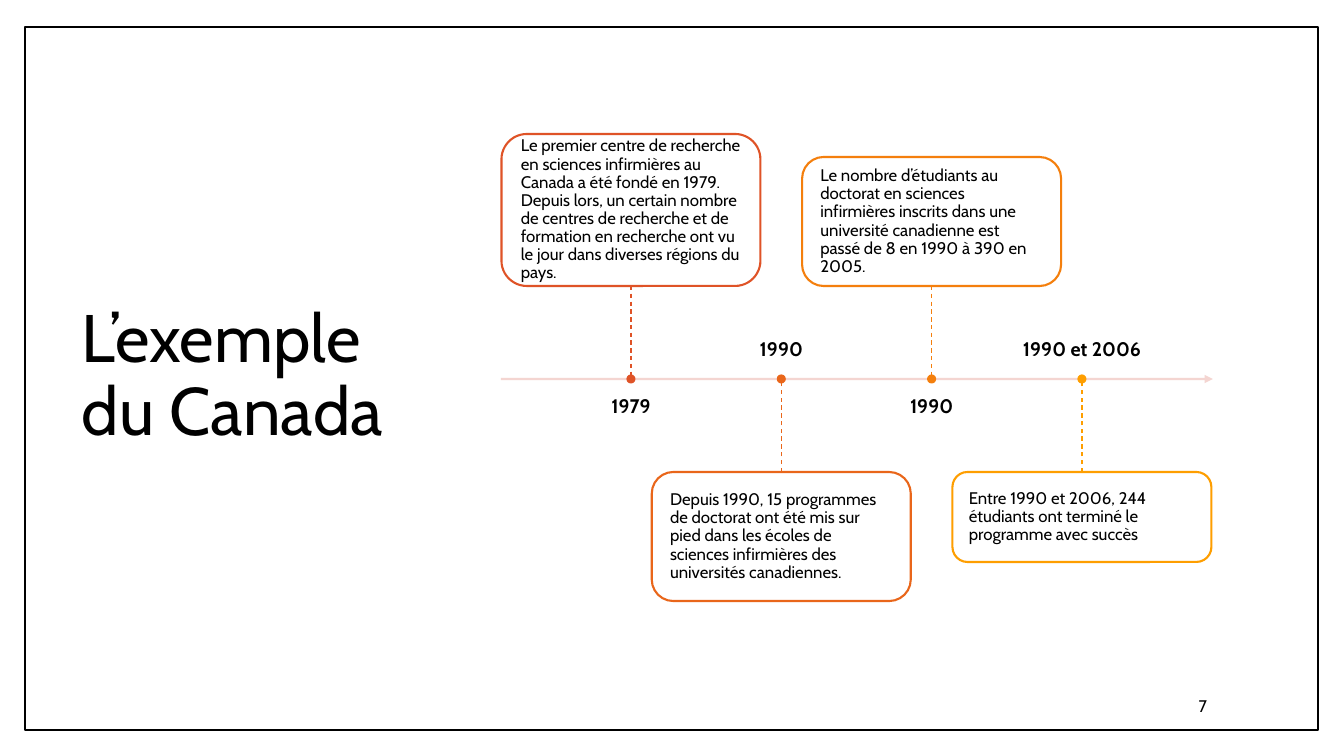
from lxml import etree
from pptx import Presentation
from pptx.dml.color import RGBColor
from pptx.enum.dml import MSO_LINE
from pptx.enum.shapes import MSO_CONNECTOR, MSO_SHAPE
from pptx.enum.text import MSO_ANCHOR, PP_ALIGN
from pptx.oxml.ns import qn
from pptx.util import Pt

DASH = MSO_LINE.DASH
STRAIGHT = MSO_CONNECTOR.STRAIGHT
RECT, ROUNDED, OVAL = MSO_SHAPE.RECTANGLE, MSO_SHAPE.ROUNDED_RECTANGLE, MSO_SHAPE.OVAL
TOP, MIDDLE, BOTTOM = MSO_ANCHOR.TOP, MSO_ANCHOR.MIDDLE, MSO_ANCHOR.BOTTOM
LEFT, CENTER, RIGHT = PP_ALIGN.LEFT, PP_ALIGN.CENTER, PP_ALIGN.RIGHT

# Content
TITLE = "L’exemple du Canada"
PAGE_NUMBER = "7"
FONT = "Cabin"
COLORS = {
    "black": "000000", "white": "FFFFFF", "axis": "F3D1CD",
    "red": "DF5327", "rust": "E9661A", "orange": "F47F0D", "amber": "FE9E00",
}
# (date, color, box height in px, description); boxes alternate above and below
EVENTS = [
    ("1979", "red", 152,
     "Le premier centre de recherche en sciences infirmières au Canada a été fondé "
     "en 1979. Depuis lors, un certain nombre de centres de recherche et de formation "
     "en recherche ont vu le jour dans diverses régions du pays."),
    ("1990", "rust", 129,
     "Depuis 1990, 15 programmes de doctorat ont été mis sur pied dans les écoles de "
     "sciences infirmières des universités canadiennes."),
    ("1990", "orange", 129,
     "Le nombre d’étudiants au doctorat en sciences infirmières inscrits dans une "
     "université canadienne est passé de 8 en 1990 à 390 en 2005."),
    ("1990 et 2006", "amber", 90,
     "Entre 1990 et 2006, 244 étudiants ont terminé le programme avec succès"),
]

# Layout in px
SLIDE_W, SLIDE_H = 1344, 756
EMU_PER_PX = 12192000 / SLIDE_W
AXIS_LEFT, AXIS_RIGHT, AXIS_Y = 501, 1213, 379
FIRST_X, LAST_X = 631, 1082
BOX_W, BOX_MARGIN, STEM = 259, 12, 93
DATE_W, DATE_H, DATE_GAP = 228, 55, 18
DOT = 7


def px(*values):
    return [round(v * EMU_PER_PX) for v in values]


def rgb(color):
    return RGBColor.from_string(COLORS[color])


def set_opacity(properties, percent):
    color = properties.find(".//" + qn("a:srgbClr"))
    etree.SubElement(color, qn("a:alpha"), val=str(percent * 1000))


def write(shape, text, size, anchor, align=LEFT, bold=False, margins=(10, 5), spacing=0.9):
    frame = shape.text_frame
    frame.text = text
    frame.word_wrap = True
    frame.vertical_anchor = anchor
    side, edge = px(*margins)
    frame.margin_left = frame.margin_right = side
    frame.margin_top = frame.margin_bottom = edge
    paragraph = frame.paragraphs[0]
    paragraph.alignment = align
    paragraph.line_spacing = spacing
    font = paragraph.runs[0].font
    font.name, font.size, font.bold = FONT, Pt(size), bold
    font.color.rgb = rgb("black")


def add_text(bounds, *args, **options):
    write(slide.shapes.add_textbox(*px(*bounds)), *args, **options)


def add_outline(kind, bounds, fill, line, width):
    shape = slide.shapes.add_shape(kind, *px(*bounds))
    shape.shadow.inherit = False
    shape.fill.solid()
    shape.fill.fore_color.rgb = rgb(fill)
    shape.line.color.rgb = rgb(line)
    shape.line.width = Pt(width)
    return shape


def add_line(start, end, color, width):
    line = slide.shapes.add_connector(STRAIGHT, *px(*start, *end))
    line.line.color.rgb = rgb(color)
    line.line.width = Pt(width)
    etree.SubElement(line._element.spPr, qn("a:effectLst"))
    return line


prs = Presentation()
prs.slide_width, prs.slide_height = px(SLIDE_W, SLIDE_H)
slide = prs.slides.add_slide(prs.slide_layouts[6])

# Frame, title and page number
add_outline(RECT, (25, 27, 1293, 703), "white", "black", 1)
add_text((72, 68, 371, 618), TITLE, 48, MIDDLE)
add_text((1028, 686, 189, 40), PAGE_NUMBER, 12, MIDDLE, RIGHT, spacing=1.0)

# Time axis
axis = add_line((AXIS_LEFT, AXIS_Y), (AXIS_RIGHT, AXIS_Y), "axis", 1.5)
axis_line = axis.line._get_or_add_ln()
set_opacity(axis_line, 90)
etree.SubElement(axis_line, qn("a:tailEnd"), type="triangle")

# Events
step = (LAST_X - FIRST_X) / (len(EVENTS) - 1)
for i, (date, color, box_h, description) in enumerate(EVENTS):
    x = FIRST_X + i * step
    if i % 2 == 0:
        stem_end = AXIS_Y - STEM
        box_top = stem_end - box_h
        date_top, date_anchor = AXIS_Y + DATE_GAP, TOP
    else:
        stem_end = box_top = AXIS_Y + STEM
        date_top, date_anchor = AXIS_Y - DATE_GAP - DATE_H, BOTTOM

    box = add_outline(ROUNDED, (x - BOX_W / 2, box_top, BOX_W, box_h), "white", color, 1.5)
    set_opacity(box.fill._xPr.find(qn("a:solidFill")), 90)
    write(box, description, 12, MIDDLE, margins=(BOX_MARGIN, BOX_MARGIN))

    stem = add_line((x, stem_end), (x, AXIS_Y), color, 0.79)
    stem.line.dash_style = DASH
    add_text((x - DATE_W / 2, date_top, DATE_W, DATE_H), date, 14, date_anchor,
             CENTER, bold=True, margins=(0, 0))
    add_outline(OVAL, (x - DOT / 2, AXIS_Y - DOT / 2, DOT, DOT), color, color, 1.5)

prs.save("out.pptx")
